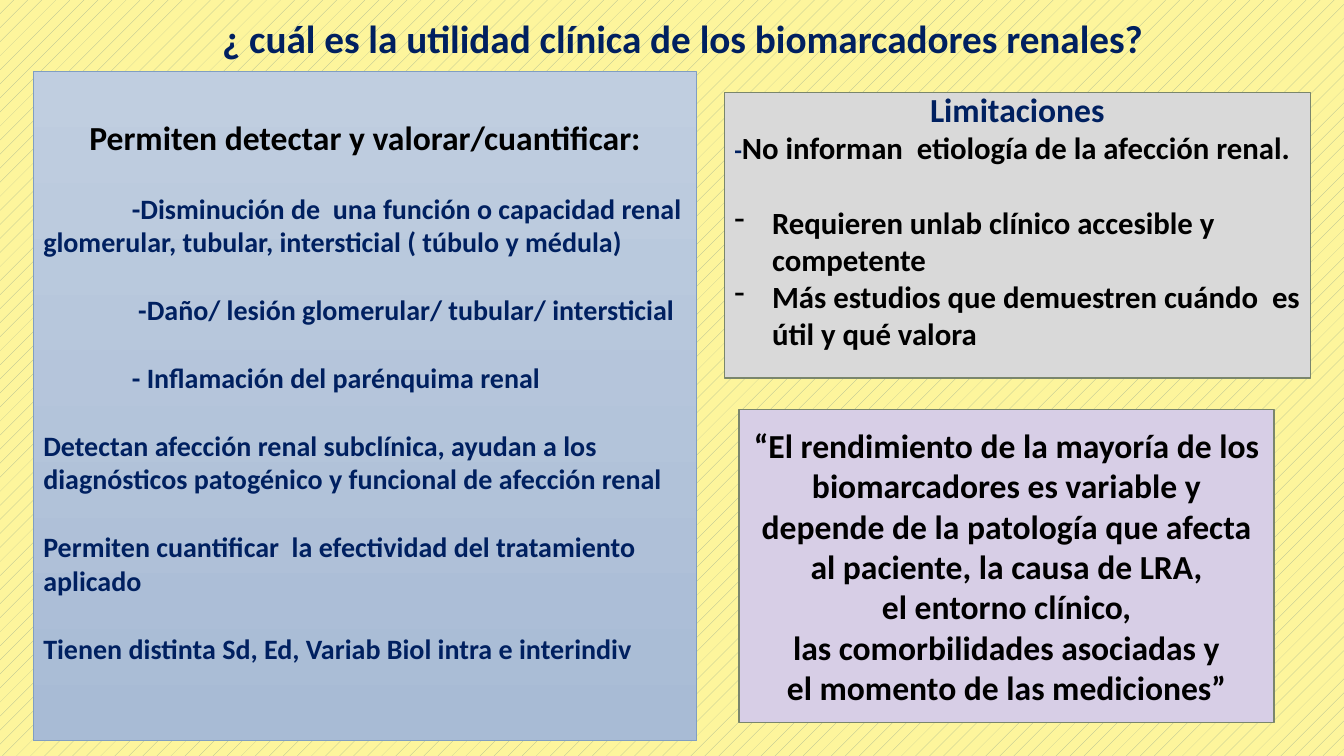
import pptx
import pptx.util
import pptx.dml.color
import pptx.enum.dml
import pptx.enum.shapes
import pptx.enum.text
import lxml.etree

Pt = pptx.util.Pt
ALIGN = pptx.enum.text.PP_ALIGN
ANCHOR = pptx.enum.text.MSO_ANCHOR

COLORS = {
    "navy": "002060",
    "black": "000000",
    "sky_top": "C0CEE0",
    "sky_bottom": "A8BBD5",
    "sky_line": "809EC2",
    "gray": "D9D9D9",
    "lilac": "D7CEE6",
    "olive_line": "7A866C",
    "paper": "FDF59C",
    "paper_dots": "A5B592",
}


def rgb(name):
    return pptx.dml.color.RGBColor.from_string(COLORS[name])


class Slide:
    font_name = "Calibri"

    def __init__(self, deck):
        self.slide = deck.slides.add_slide(deck.slide_layouts[6])

    def background(self, front, back):
        fill = self.slide.background.fill
        fill.patterned()
        fill.pattern = pptx.enum.dml.MSO_PATTERN.PERCENT_5
        fill.fore_color.rgb = rgb(front)
        fill.back_color.rgb = rgb(back)

    def style(self, font, size, color):
        font.name = self.font_name
        font.bold = True
        font.size = Pt(size)
        font.color.rgb = rgb(color)

    def title(self, text, left, top, width, height):
        frame = self.slide.shapes.add_textbox(Pt(left), Pt(top), Pt(width), Pt(height)).text_frame
        frame.word_wrap = True
        heading = self.paragraph(frame, text, 28, "navy", align=ALIGN.CENTER)
        heading.line_spacing = 0.9

    def panel(self, left, top, width, height, fills, line, line_width, bottom_inset=3.6):
        panel = self.slide.shapes.add_shape(
            pptx.enum.shapes.MSO_SHAPE.RECTANGLE, Pt(left), Pt(top), Pt(width), Pt(height))
        panel.shadow.inherit = False
        if len(fills) == 1:
            panel.fill.solid()
            panel.fill.fore_color.rgb = rgb(fills[0])
        else:
            panel.fill.gradient()
            panel.fill.gradient_angle = 270
            for position, (stop, color) in enumerate(zip(panel.fill.gradient_stops, fills)):
                stop.position = position
                stop.color.rgb = rgb(color)
        panel.line.color.rgb = rgb(line)
        panel.line.width = Pt(line_width)
        frame = panel.text_frame
        frame.word_wrap = True
        frame.vertical_anchor = ANCHOR.MIDDLE
        frame.margin_bottom = Pt(bottom_inset)
        return frame

    def paragraph(self, frame, text, size, color, align=ALIGN.LEFT, before=0, indent=0):
        paragraph = frame.paragraphs[0]
        if paragraph.runs:
            paragraph = frame.add_paragraph()
        paragraph.add_run().text = text
        paragraph.alignment = align
        paragraph.space_before = Pt(before)
        self.style(paragraph.font, size, color)
        if indent:
            paragraph._p.get_or_add_pPr().set("indent", str(Pt(indent)))
        return paragraph

    def bullet(self, frame, text, size, color, before=0):
        paragraph = self.paragraph(frame, text, size, color, before=before, indent=-27)
        properties = paragraph._p.get_or_add_pPr()
        properties.set("marL", str(Pt(27)))
        mark = lxml.etree.Element(pptx.oxml.ns.qn("a:buChar"), char="-")
        properties.find(pptx.oxml.ns.qn("a:defRPr")).addprevious(mark)


def main():
    deck = pptx.Presentation()
    deck.slide_width, deck.slide_height = Pt(960), Pt(540)
    slide = Slide(deck)
    slide.background("paper_dots", "paper")
    slide.title("¿ cuál es la utilidad clínica de los biomarcadores renales?", 127.5, 10.8, 720, 55.4)

    uses = slide.panel(23.8, 51.1, 473.8, 478.1, ["sky_top", "sky_bottom"], "sky_line", 0.5, 25.6)
    slide.paragraph(uses, "Permiten detectar y valorar/cuantificar:", 24, "black", ALIGN.CENTER)
    for text, indent in (
        ("-Disminución de  una función o capacidad renal glomerular, tubular, "
         "intersticial ( túbulo y médula)", 63.3),
        ("-Daño/ lesión glomerular/ tubular/ intersticial", 67.8),
        ("- Inflamación del parénquima renal", 63.3),
        ("Detectan afección renal subclínica, ayudan a los diagnósticos patogénico "
         "y funcional de afección renal", 0),
        ("Permiten cuantificar  la efectividad del tratamiento aplicado", 0),
        ("Tienen distinta Sd, Ed, Variab Biol intra e interindiv", 0),
    ):
        slide.paragraph(uses, text, 20, "navy", before=24.4, indent=indent)

    limits = slide.panel(517.4, 66.3, 418.6, 203.8, ["gray"], "olive_line", 1, 25.6)
    slide.paragraph(limits, "Limitaciones", 24, "navy", ALIGN.CENTER)
    etiology = slide.paragraph(limits, "-", 22, "black")
    slide.style(etiology.runs[0].font, 18, "navy")
    statement = etiology.add_run()
    statement.text = "No informan  etiología de la afección renal."
    slide.style(statement.font, 22, "black")
    slide.bullet(limits, "Requieren unlab clínico accesible y competente", 22, "black", before=26.8)
    slide.bullet(limits, "Más estudios que demuestren cuándo  es útil y qué valora", 22, "black")

    quote = slide.panel(527.8, 292.3, 382.3, 223.9, ["lilac"], "olive_line", 1)
    for text in (
        "“El rendimiento de la mayoría de los biomarcadores es variable y depende "
        "de la patología que afecta al paciente, la causa de LRA,",
        "el entorno clínico,",
        "las comorbilidades asociadas y",
        "el momento de las mediciones”",
    ):
        slide.paragraph(quote, text, 24, "black", ALIGN.CENTER)

    deck.save("out.pptx")


if __name__ == "__main__":
    main()
